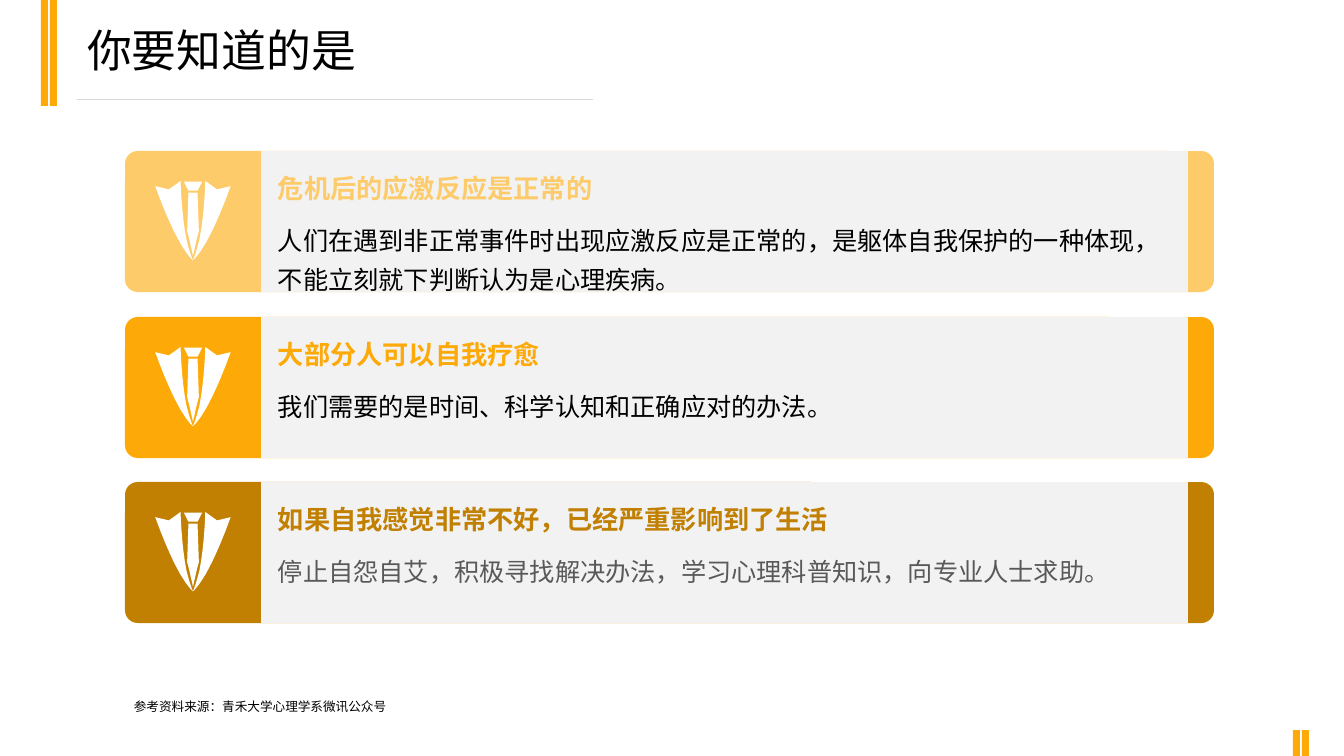
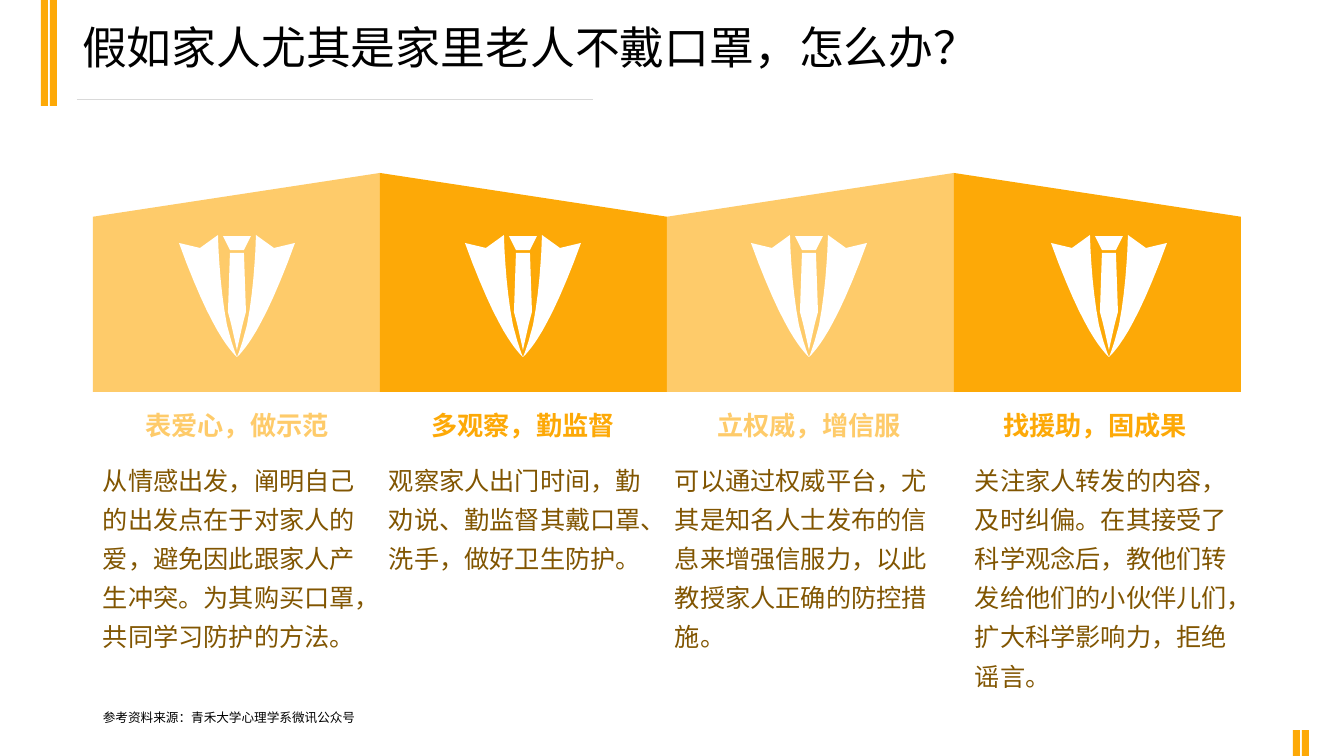
from lxml.etree import SubElement
from pptx import Presentation
from pptx.dml.color import RGBColor
from pptx.enum.shapes import MSO_CONNECTOR, MSO_SHAPE
from pptx.enum.text import MSO_ANCHOR, MSO_AUTO_SIZE, PP_ALIGN
from pptx.oxml.ns import qn
from pptx.util import Emu, Pt

PX = 914400 / 100.8
COLORS = {
    "light": "FECB6A",
    "main": "FDA907",
    "dark": "C18002",
    "brown": "815501",
    "panel": "F2F2F2",
    "rule": "D9D9D9",
    "gray": "595959",
    "black": "000000",
    "white": "FFFFFF",
}
CJK_FONT = "Noto Sans CJK SC"
SOURCE = "参考资料来源：青禾大学心理学系微讯公众号"

LAPEL = [(-19, 0), (-37, 13), (-58, 8), (-37, 66, -21, 95, -11, 109),
         (-4, 119, 0, 122, 0, 122), (-4, 113, -7, 101, -10, 90),
         (-18, 49, -19, 0, -19, 0)]
SUIT = [
    [(7, 15), (14, 1), (-14, 1), (-7, 15)],
    [(-9, 77), (-6, 87, 0, 115, 0, 115), (0, 115, 6, 87, 9, 77), (7, 18), (-7, 18)],
    LAPEL,
    [tuple(-value if index % 2 == 0 else value for index, value in enumerate(step))
     for step in LAPEL],
]

CARDS = [
    (151, "light", "危机后的应激反应是正常的", "black", 84,
     "人们在遇到非正常事件时出现应激反应是正常的，是躯体自我保护的一种体现，不能立刻就下判断认为是心理疾病。"),
    (317, "main", "大部分人可以自我疗愈", "black", 44,
     "我们需要的是时间、科学认知和正确应对的办法。"),
    (482, "dark", "如果自我感觉非常不好，已经严重影响到了生活", "gray", 44,
     "停止自怨自艾，积极寻找解决办法，学习心理科普知识，向专业人士求助。"),
]
COLUMNS = [
    ("light", "表爱心，做示范", 205, 0,
     "从情感出发，阐明自己的出发点在于对家人的爱，避免因此跟家人产生冲突。为其购买口罩，共同学习防护的方法。"),
    ("main", "多观察，勤监督", 125, 0,
     "观察家人出门时间，勤劝说、勤监督其戴口罩、洗手，做好卫生防护。"),
    ("light", "立权威，增信服", 205, 0,
     "可以通过权威平台，尤其是知名人士发布的信息来增强信服力，以此教授家人正确的防控措施。"),
    ("main", "找援助，固成果", 244, 14,
     "关注家人转发的内容，及时纠偏。在其接受了科学观念后，教他们转发给他们的小伙伴儿们，扩大科学影响力，拒绝谣言。"),
]


def px(*lengths):
    """Turn pixel lengths into EMU."""
    return [Emu(round(length * PX)) for length in lengths]


def trace(steps, steps_per_curve=8):
    """Turn line and cubic curve steps into a list of points."""
    points = []
    for step in steps:
        if len(step) == 2:
            points.append(step)
            continue
        controls = [points[-1], step[0:2], step[2:4], step[4:6]]
        for index in range(1, steps_per_curve + 1):
            t = index / steps_per_curve
            weights = ((1 - t) ** 3, 3 * t * (1 - t) ** 2, 3 * t * t * (1 - t), t ** 3)
            points.append(tuple(sum(weight * control[axis]
                                    for weight, control in zip(weights, controls))
                                for axis in (0, 1)))
    return points


class Builder:
    """Hold the deck style and the current page."""

    def __init__(self):
        """Open a deck with the shared slide size."""
        self.deck = Presentation()
        self.deck.slide_width, self.deck.slide_height = px(1344, 756)
        self.layout = self.deck.slide_layouts[5]
        self.page = None

    def new_page(self, title, left, top):
        """Start a page with its title, decorating the layout the first time."""
        first = self.page is None
        self.page = self.deck.slides.add_slide(self.layout)
        if first:
            self.decorate_layout()
        box = self.page.shapes.title
        box.left, box.top, box.width, box.height = px(left, top, 874, 65)
        self.set_text(box, title, 32, "black", "Roboto Condensed", anchor=MSO_ANCHOR.MIDDLE)

    def decorate_layout(self):
        """Place the bars and the title rule on the shared layout."""
        bars = [(41, 0, 7, 106), (50, 0, 7, 106), (1293, 730, 7, 26), (1302, 730, 7, 26)]
        parts = [self.shape(MSO_SHAPE.RECTANGLE, bar, "main") for bar in bars]
        parts.append(self.rule(77, 100, 593, 100))
        for number, part in enumerate(parts, start=20):
            part.element.xpath(".//p:cNvPr")[0].set("id", str(number))
            self.layout.shapes.element.append(part.element)

    def shape(self, kind, area, color):
        """Add a filled preset shape."""
        shape = self.page.shapes.add_shape(kind, *px(*area))
        self.paint(shape, color)
        return shape

    def paint(self, shape, color):
        """Fill a shape and drop its outline and shadow."""
        shape.fill.solid()
        shape.fill.fore_color.rgb = RGBColor.from_string(COLORS[color])
        shape.line.fill.background()
        shape.shadow.inherit = False

    def rule(self, *ends):
        """Add a thin straight line."""
        line = self.page.shapes.add_connector(MSO_CONNECTOR.STRAIGHT, *px(*ends))
        line.line.color.rgb = RGBColor.from_string(COLORS["rule"])
        line.line.width = Pt(0.75)
        SubElement(line.element.spPr, qn("a:effectLst"))
        return line

    def set_text(self, box, text, size, color, font, bold=False, align=PP_ALIGN.LEFT,
                 anchor=MSO_ANCHOR.TOP, spacing=None):
        """Put one formatted paragraph into a box."""
        frame = box.text_frame
        frame.word_wrap = True
        frame.auto_size = MSO_AUTO_SIZE.NONE
        frame.vertical_anchor = anchor
        para = frame.paragraphs[0]
        para.text = text
        para.alignment = align
        if spacing:
            para.line_spacing = Pt(spacing)
        para.font.size = Pt(size)
        para.font.bold = bold
        para.font.color.rgb = RGBColor.from_string(COLORS[color])
        para.font.name = font
        for properties in box.element.iter(qn("a:defRPr")):
            SubElement(properties, qn("a:ea")).set("typeface", CJK_FONT)

    def heading(self, text, area, color, font, align=PP_ALIGN.LEFT):
        """Add a bold heading."""
        box = self.page.shapes.add_textbox(*px(*area))
        self.set_text(box, text, 18.7, color, font, True, align, MSO_ANCHOR.MIDDLE)

    def body(self, text, area, color, font=CJK_FONT, size=18, spacing=28):
        """Add running text."""
        box = self.page.shapes.add_textbox(*px(*area))
        self.set_text(box, text, size, color, font, spacing=spacing)

    def source(self, left, top):
        """Add the source note."""
        self.body(SOURCE, (left, top, 384, 28), "black", size=9, spacing=14)

    def suit(self, center, top, percent=100):
        """Add the white suit icon as a group."""
        group = self.page.shapes.add_group_shape()
        for steps in SUIT:
            points = [(x * 10, y * 10) for x, y in trace(steps)]
            outline = group.shapes.build_freeform(*points[0], scale=PX * percent / 1000)
            outline.add_line_segments(points[1:], close=True)
            self.paint(outline.convert_to_shape(*px(center, top)), "white")

    def card(self, top, color, heading, text_color, height, text):
        """Add a rounded card with icon, heading and text."""
        card = self.shape(MSO_SHAPE.ROUNDED_RECTANGLE, (125, top, 1089, 141), color)
        card.adjustments[0] = 0.09
        self.shape(MSO_SHAPE.RECTANGLE, (261, top, 927, 141), "panel")
        self.heading(heading, (268, top + 16, 603, 42), color, "Arial")
        self.body(text, (268, top + 60, 893, height), text_color)
        self.suit(193, top + 30, 65)

    def column(self, index, color, heading, height, shift, text):
        """Add a slanted panel with icon, heading and text."""
        panel = self.shape(MSO_SHAPE.FLOWCHART_MANUAL_INPUT,
                           (93 + 287 * index, 173, 287, 219), color)
        if index % 2:
            panel.element.spPr.find(qn("a:xfrm")).set("flipH", "1")
        left = 93 + 286 * index
        self.heading(heading, (left, 404, 288, 42), color, CJK_FONT, PP_ALIGN.CENTER)
        self.body(text, (left + shift, 451, 288, height), "brown", "Arial")
        self.suit(left + 144 + shift, 235)


def main():
    """Build both pages and save the deck."""
    builder = Builder()
    builder.new_page("你要知道的是", 77, 17)
    for card in CARDS:
        builder.card(*card)
    builder.source(124, 690)

    builder.new_page("假如家人尤其是家里老人不戴口罩，怎么办？", 72, 14)
    for index, column in enumerate(COLUMNS):
        builder.column(index, *column)
    builder.source(93, 701)
    builder.deck.save("out.pptx")


if __name__ == "__main__":
    main()
